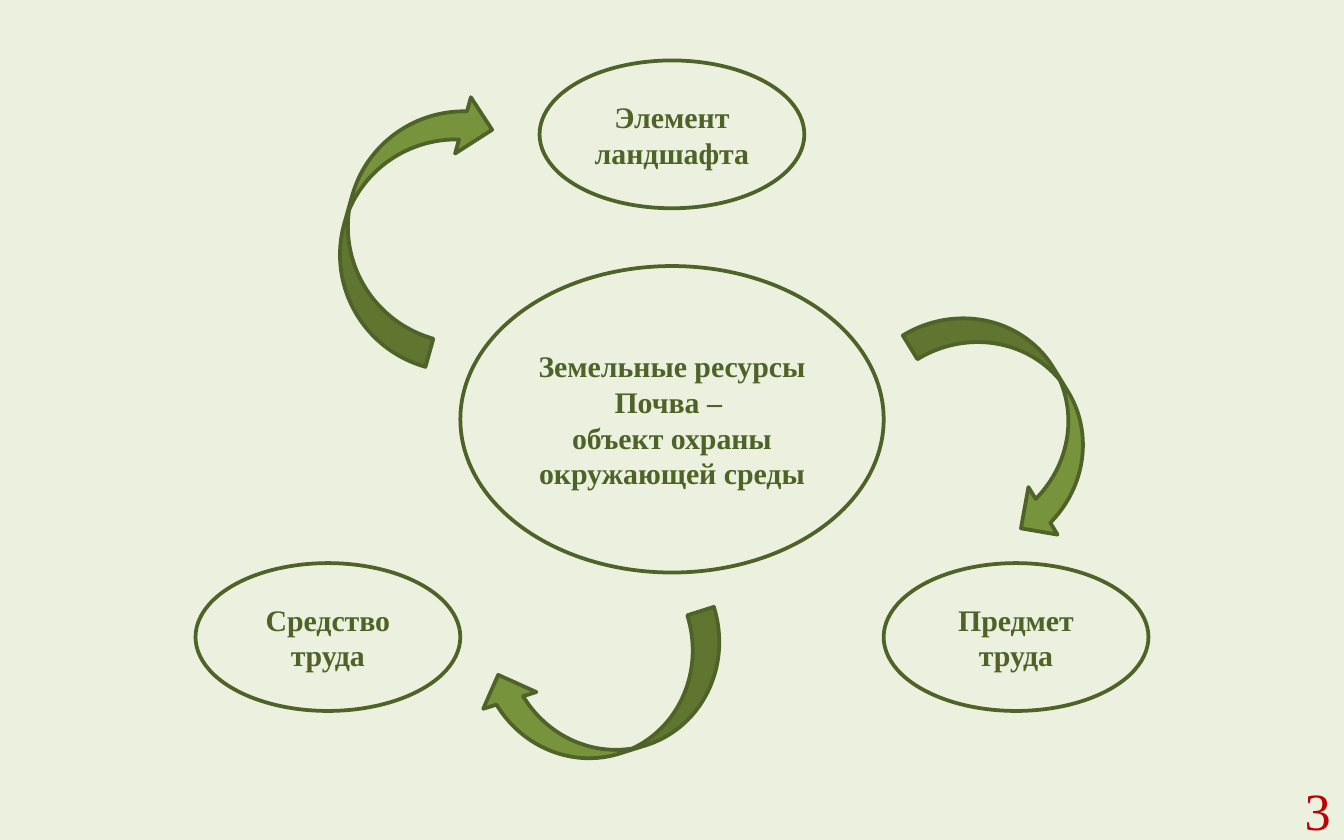
from dataclasses import dataclass

from pptx import Presentation
from pptx import util as u
from pptx.dml.color import RGBColor
from pptx.enum import shapes, text


@dataclass(frozen=True)
class Theme:
    paper: str = "EBF1DE"
    ink: str = "4F6228"
    arrow: str = "77933C"
    number: str = "C00000"
    typeface: str = "Times New Roman"
    label_size: int = 16
    number_size: int = 28
    outline: int = 2


THEME = Theme()
WIDTH, HEIGHT = u.Inches(10), u.Inches(6.25)
COLUMN, ROW = WIDTH / 100, HEIGHT / 100

CORE_SIZE = (31.5, 36.48)
ROLE_SIZE = (19.7, 17.6)
CORE = ((50, 49.92), ["Земельные ресурсы", "Почва – ", "объект охраны окружающей среды"])
ROLES = [
    ((50, 16), "Элемент ландшафта"),
    ((24.4, 75.84), "Средство труда"),
    ((75.6, 75.84), "Предмет труда"),
]
ARROWS = [
    ((30.25, 26), (20.5, 13.92), 285.7),
    ((45.35, 83.12), (18.9, 13.28), 162.5),
    ((75.65, 49.36), (18.9, 13.28), 58.5),
]


def centred_box(centre, size):
    (x, y), (width, height) = centre, size
    return x - width / 2, y - height / 2, width, height


def to_lengths(box):
    return [u.Emu(round(part * unit)) for part, unit in zip(box, (COLUMN, ROW) * 2)]


def write(frame, lines, size, colour, align, bold=False):
    frame.word_wrap = True
    frame.vertical_anchor = text.MSO_ANCHOR.MIDDLE
    style = {"name": THEME.typeface, "size": u.Pt(size), "bold": bold}
    for index, line in enumerate(lines):
        para = frame.add_paragraph() if index else frame.paragraphs[0]
        para.alignment = align
        span = para.add_run()
        span.text = line
        for name, value in style.items():
            setattr(span.font, name, value)
        span.font.color.rgb = RGBColor.from_string(colour)


def add_outlined(page, kind, box, fill):
    shape = page.shapes.add_shape(kind, *to_lengths(box))
    shape.shadow.inherit = False
    shape.fill.solid()
    shape.fill.fore_color.rgb = RGBColor.from_string(fill)
    shape.line.color.rgb = RGBColor.from_string(THEME.ink)
    shape.line.width = u.Pt(THEME.outline)
    return shape


def add_oval(page, box, lines):
    oval = add_outlined(page, shapes.MSO_SHAPE.OVAL, box, THEME.paper)
    write(oval.text_frame, lines, THEME.label_size, THEME.ink, text.PP_ALIGN.CENTER, bold=True)


def add_curved_arrow(page, box, rotation):
    arrow = add_outlined(page, shapes.MSO_SHAPE.CURVED_DOWN_ARROW, box, THEME.arrow)
    arrow.rotation = rotation


def add_page_number(page, box, number):
    frame = page.shapes.add_textbox(*to_lengths(box)).text_frame
    write(frame, [number], THEME.number_size, THEME.number, text.PP_ALIGN.RIGHT)


def main():
    deck = Presentation()
    deck.slide_width, deck.slide_height = WIDTH, HEIGHT
    page = deck.slides.add_slide(deck.slide_layouts[6])
    page.background.fill.solid()
    page.background.fill.fore_color.rgb = RGBColor.from_string(THEME.paper)

    add_page_number(page, (94.9, 92.8, 5.1, 7.2), "3")
    centre, lines = CORE
    add_oval(page, centred_box(centre, CORE_SIZE), lines)
    for centre, label in ROLES:
        add_oval(page, centred_box(centre, ROLE_SIZE), [label])
    for centre, size, rotation in ARROWS:
        add_curved_arrow(page, centred_box(centre, size), rotation)

    deck.save("out.pptx")


if __name__ == "__main__":
    main()
